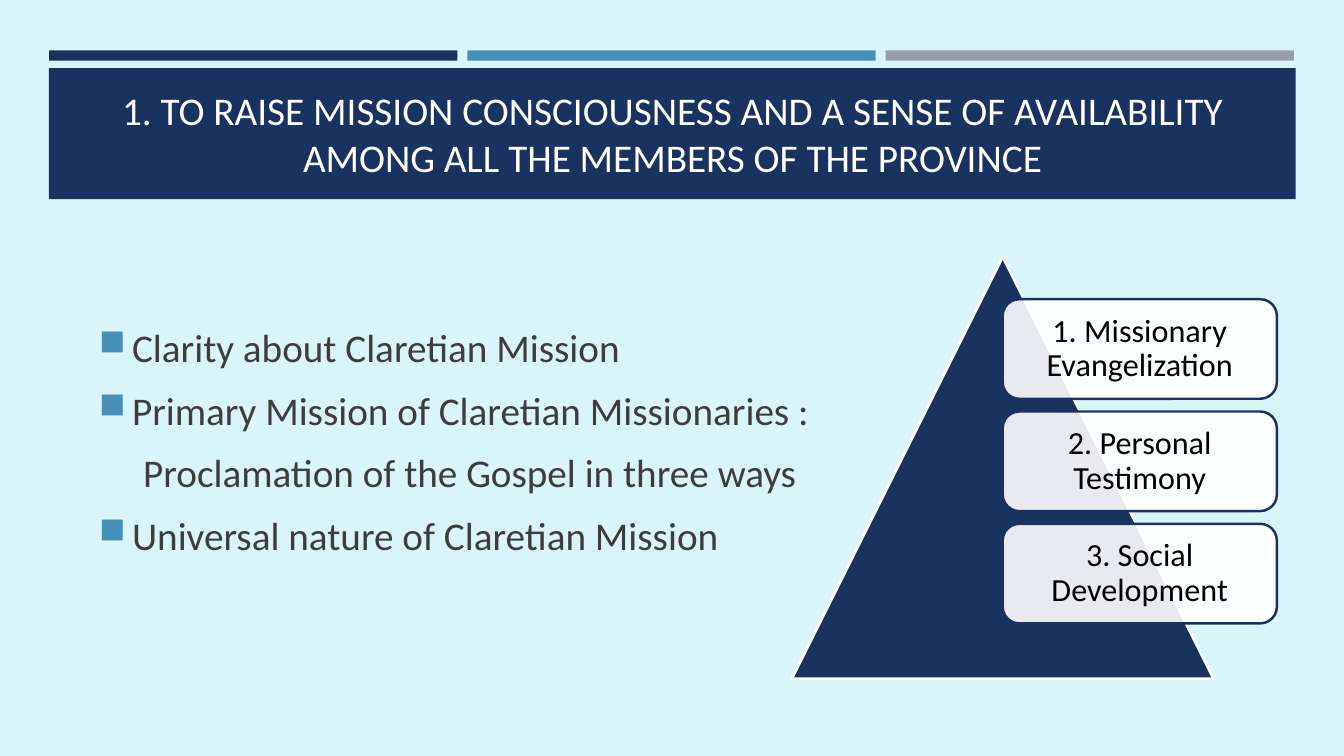
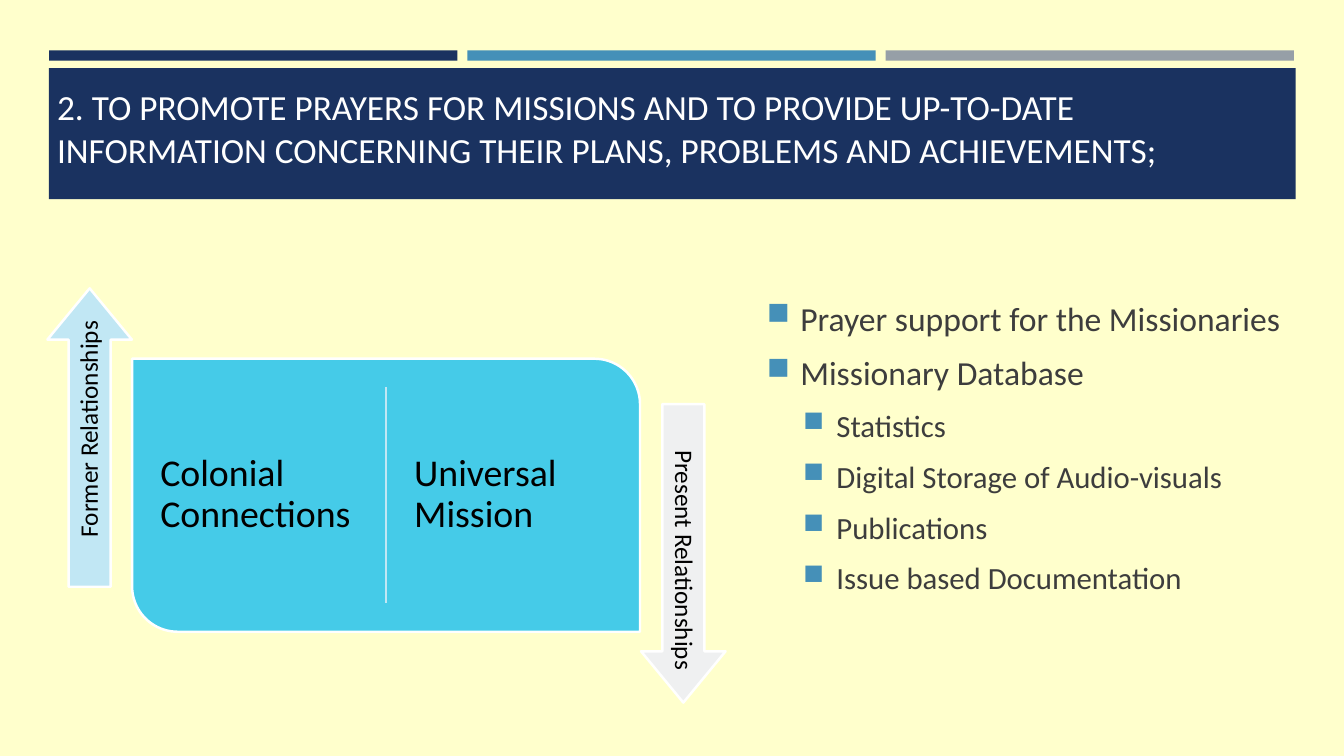
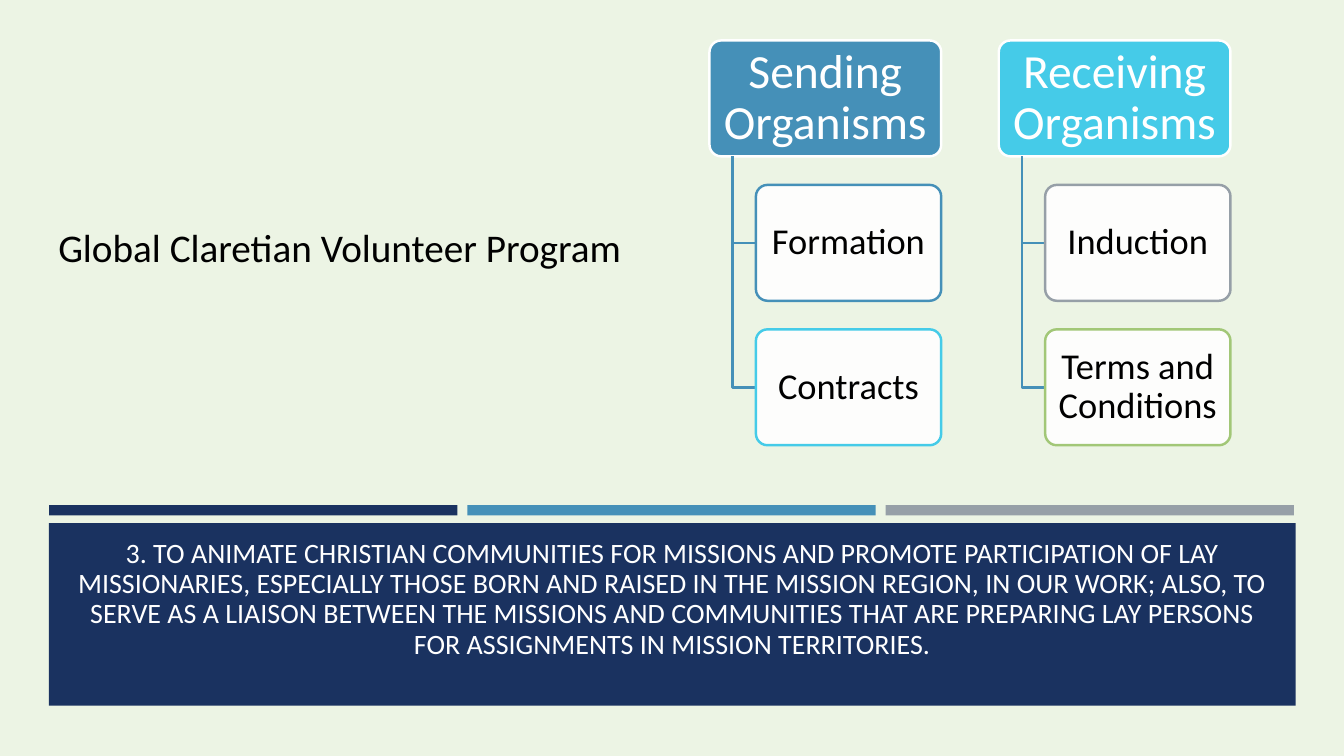
import pptx
import pptx.util
import pptx.dml.color
import pptx.enum.shapes
import pptx.enum.text
import lxml.etree

Cm, Pt = pptx.util.Cm, pptx.util.Pt
KIND = pptx.enum.shapes.MSO_SHAPE
SIDE = pptx.enum.text.PP_ALIGN
HOLD = pptx.enum.text.MSO_ANCHOR

HUES = {
    "navy": "1A3260", "blue": "4590B8", "gray": "969FA7", "cyan": "45CBE8",
    "green": "A2C777", "pale": "C1E7F4", "mist": "EFF0F1", "white": "FFFFFF",
    "black": "000000", "ink": "3D3D3D",
    "sky": "DAF5FA", "cream": "FFFFCC", "leaf": "ECF4E4",
}


class Deck:
    face = "Calibri"
    edge = Pt(1.75)
    left, wide = 1.23, 31.42

    def __init__(self):
        self.show = pptx.Presentation()
        self.show.slide_width = Cm(33.87)
        self.show.slide_height = Cm(19.05)

    def hue(self, name):
        return pptx.dml.color.RGBColor.from_string(HUES[name])

    def node(self, root, tag, **attrs):
        return lxml.etree.SubElement(root, pptx.oxml.ns.qn(tag), attrs)

    def put(self, item, values):
        for name, value in values.items():
            setattr(item, name, value)

    def page(self, back):
        self.slide = self.show.slides.add_slide(self.show.slide_layouts[6])
        fill = self.slide.background.fill
        fill.solid()
        fill.fore_color.rgb = self.hue(back)

    def ink(self, shape, line):
        if line:
            shape.line.color.rgb = self.hue(line)
            shape.line.width = self.edge
        else:
            shape.line.fill.background()

    def shape(self, kind, box, fill, line=None, adj=(), turn=0, clear=False):
        shape = self.slide.shapes.add_shape(kind, *map(Cm, box))
        shape.shadow.inherit = False
        shape.rotation = turn
        for spot, value in enumerate(adj):
            shape.adjustments[spot] = value
        shape.fill.solid()
        shape.fill.fore_color.rgb = self.hue(fill)
        if clear:
            tint = shape._element.spPr.find(".//" + pptx.oxml.ns.qn("a:srgbClr"))
            self.node(tint, "a:alpha", val="90000")
        self.ink(shape, line)
        return shape

    def text(self, shape, text, size, hue="black", side=SIDE.LEFT,
             hold=HOLD.MIDDLE, pad=(0.25, 0.13), gap=0.9):
        frame = shape.text_frame
        across, down = map(Cm, pad)
        self.put(frame, {
            "word_wrap": True, "vertical_anchor": hold,
            "margin_left": across, "margin_right": across,
            "margin_top": down, "margin_bottom": down,
        })
        self.line(frame.paragraphs[0], text, size, hue,
                  {"alignment": side, "line_spacing": gap})

    def line(self, para, text, size, hue, style):
        self.put(para, style)
        run = para.add_run()
        run.text = text
        self.put(run.font, {"name": self.face, "size": Pt(size)})
        run.font.color.rgb = self.hue(hue)

    def label(self, box, text, size, **style):
        self.text(self.slide.shapes.add_textbox(*map(Cm, box)), text, size, **style)

    def band(self, top, high):
        for spot, hue in enumerate(("navy", "blue", "gray")):
            self.shape(KIND.RECTANGLE, (1.24 + 10.54 * spot, top, 10.29, 0.26), hue)
        self.shape(KIND.RECTANGLE, (self.left, top + 0.45, self.wide, high), "navy")

    def title(self, box, text, size, **style):
        self.label(box, text, size, hue="white", **style)

    def list(self, box, rows):
        frame = self.slide.shapes.add_textbox(*map(Cm, box)).text_frame
        frame.word_wrap = True
        for spot, (text, size, inset, mark) in enumerate(rows):
            para = frame.add_paragraph() if spot else frame.paragraphs[0]
            self.line(para, text, size, "ink",
                      {"space_before": Pt(size * 0.18), "space_after": Pt(6)})
            props = para._p.get_or_add_pPr()
            props.set("marL", str(Cm(inset)))
            if mark:
                props.set("indent", str(Cm(-0.84)))
                self.node(self.node(props, "a:buClr"), "a:srgbClr", val=HUES["blue"])
                self.node(props, "a:buSzPct", val="92000")
                self.node(props, "a:buChar", char="■")

    def rule(self, start, end, hue):
        rule = self.slide.shapes.add_connector(
            pptx.enum.shapes.MSO_CONNECTOR.STRAIGHT, *map(Cm, start + end))
        self.ink(rule, hue)
        self.node(rule._element.spPr, "a:effectLst")

    def elbow(self, left, top, right, low):
        pen = self.slide.shapes.build_freeform(Cm(left), Cm(top))
        pen.add_line_segments([(Cm(left), Cm(low)), (Cm(right), Cm(low))], close=False)
        bend = pen.convert_to_shape()
        bend.shadow.inherit = False
        bend.fill.background()
        self.ink(bend, "blue")

    def card(self, box, text, size, fill="white", line="white", hue="black",
             pad=(0.13, 0.1), adj=(0.1,)):
        card = self.shape(KIND.ROUNDED_RECTANGLE, box, fill, line, adj,
                          clear=fill == "white")
        self.text(card, text, size, hue, SIDE.CENTER, pad=pad)


def rouse(deck):
    deck.page("sky")
    deck.band(1.27, 3.3)
    deck.title((1.63, 1.96, 30.63, 2.82),
               "1. TO RAISE MISSION CONSCIOUSNESS AND A SENSE OF AVAILABILITY "
               "AMONG ALL THE MEMBERS OF THE PROVINCE",
               28, side=SIDE.CENTER, gap=1.0)
    deck.list((2.24, 8.03, 19.15, 10.21), [
        ("Clarity about Claretian Mission", 28, 0.84, True),
        ("Primary Mission of Claretian Missionaries :", 28, 0.84, True),
        ("Proclamation of the Gospel in three ways", 28, 1.12, False),
        ("Universal nature of Claretian Mission", 28, 0.84, True),
    ])
    deck.shape(KIND.ISOSCELES_TRIANGLE, (19.96, 6.48, 10.62, 10.62), "navy", "white")
    ways = ("1. Missionary Evangelization", "2. Personal Testimony",
            "3. Social Development")
    for spot, text in enumerate(ways):
        deck.card((25.27, 7.54 + 2.83 * spot, 6.91, 2.51), text, 23,
                  line="navy", pad=(0.25, 0.25), adj=(0.167,))


def pray(deck):
    deck.page("cream")
    deck.band(1.27, 3.3)
    deck.title((1.19, 2.03, 31.06, 2.82),
               "2. TO PROMOTE PRAYERS FOR MISSIONS AND TO PROVIDE UP-TO-DATE "
               "INFORMATION CONCERNING THEIR PLANS, PROBLEMS AND ACHIEVEMENTS;",
               25.2, hold=HOLD.TOP, gap=1.0)
    main = ("Prayer support for the Missionaries", "Missionary Database")
    subs = ("Statistics", "Digital Storage of Audio-visuals", "Publications",
            "Issue based Documentation")
    deck.list((19.08, 7.37, 13.59, 10.21),
              [(text, 24, 0.84, True) for text in main]
              + [(text, 22, 1.75, True) for text in subs])
    deck.shape(KIND.ROUND_2_DIAG_RECTANGLE, (3.33, 9.04, 12.8, 6.88),
               "cyan", "white", (0, 0.167))
    deck.rule((9.73, 9.75), (9.73, 15.19), "pale")
    for left, text in ((3.76, "Colonial Connections"), (10.16, "Universal Mission")):
        deck.label((left, 9.55, 5.56, 5.84), text, 27, pad=(0.28, 0.28))
    arrows = ((-1.5, 9.96, 270, "pale", "Former Relationships"),
              (13.46, 12.88, 90, "mist", "Present Relationships"))
    for left, top, turn, fill, text in arrows:
        arrow = deck.shape(KIND.RIGHT_ARROW, (left, top, 7.52, 2.13), fill,
                           "white", (0.498, 0.607), turn)
        deck.text(arrow, text, 18, side=SIDE.RIGHT, pad=(0.18, 0.18))


def serve(deck):
    deck.page("leaf")
    deck.band(12.73, 4.6)
    deck.title((1.63, 13.46, 30.63, 3.91),
               "3. TO ANIMATE CHRISTIAN COMMUNITIES FOR MISSIONS AND PROMOTE "
               "PARTICIPATION OF LAY MISSIONARIES, ESPECIALLY THOSE BORN AND RAISED "
               "IN THE MISSION REGION, IN OUR WORK; ALSO, TO SERVE AS A LIAISON "
               "BETWEEN THE MISSIONS AND COMMUNITIES THAT ARE PREPARING LAY PERSONS "
               "FOR ASSIGNMENTS IN MISSION TERRITORIES.",
               20, side=SIDE.CENTER, hold=HOLD.TOP)
    trees = (
        ("Sending Organisms", "blue", (("Formation", "blue"), ("Contracts", "cyan"))),
        ("Receiving Organisms", "cyan",
         (("Induction", "gray"), ("Terms and Conditions", "green"))),
    )
    top, high, step = 1.02, 2.92, 3.64
    for col, (head, fill, kids) in enumerate(trees):
        left = 17.88 + 7.29 * col
        deck.card((left, top, 5.84, high), head, 34, fill, hue="white",
                  pad=(0.17, 0.11))
        for row, (text, line) in enumerate(kids, 1):
            kid = top + step * row
            deck.elbow(left + 0.58, top + high, left + 1.17, kid + high / 2)
            deck.card((left + 1.17, kid, 4.67, high), text, 26, line=line)
    deck.label((1.22, 5.49, 15.47, 2.24), "Global Claretian Volunteer Program", 28,
               hold=HOLD.TOP, gap=1.0)


def main():
    deck = Deck()
    for build in (rouse, pray, serve):
        build(deck)
    deck.show.save("out.pptx")


if __name__ == "__main__":
    main()
